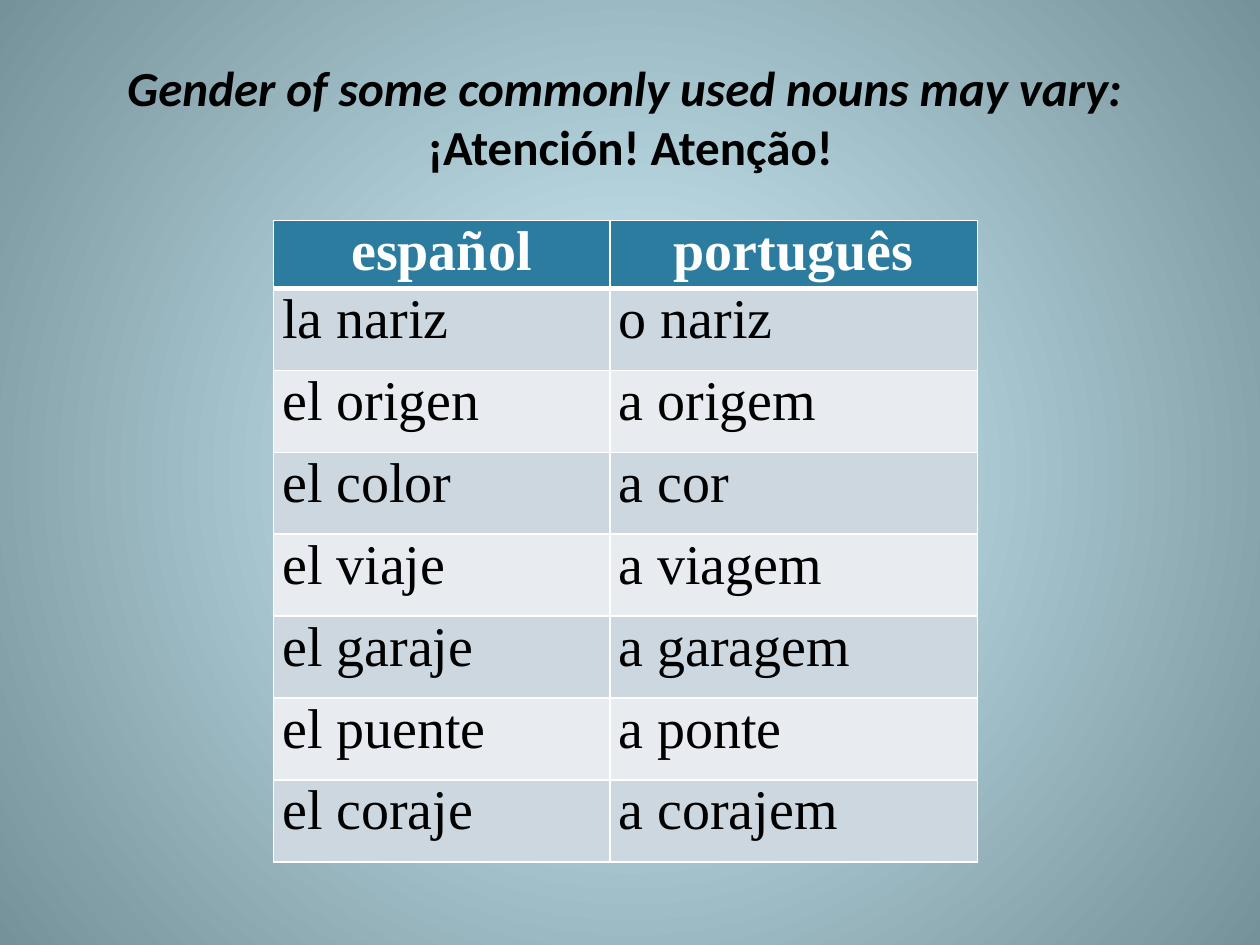
from lxml.etree import SubElement
from pptx import Presentation
from pptx.dml.color import RGBColor
from pptx.enum.text import MSO_ANCHOR as Anchor, PP_ALIGN as Align
from pptx.oxml import parse_xml
from pptx.oxml.ns import nsdecls, qn
from pptx.util import Inches, Pt

BLACK = RGBColor(0x00, 0x00, 0x00)
WHITE = RGBColor(0xFF, 0xFF, 0xFF)
HEADER_BLUE = RGBColor(0x2C, 0x7C, 0x9F)
BANDS = (RGBColor(0xCD, 0xD7, 0xDF), RGBColor(0xE8, 0xEC, 0xF0))
GLOW = RGBColor(0xD5, 0xF5, 0xFF)
EDGE = RGBColor(0x75, 0x91, 0x9A)

TITLE_FONT = {"name": "Calibri", "size": Pt(28), "bold": True}
HEADER_FONT = {"name": "Times New Roman", "size": Pt(32), "bold": True}
BODY_FONT = {**HEADER_FONT, "bold": False}
CELL_FORMAT = {
    "margin_left": Inches(0.07),
    "margin_right": Inches(0.07),
    "margin_top": 0,
    "margin_bottom": 0,
    "vertical_anchor": Anchor.TOP,
}
COLUMN_WIDTHS = (2.67, 2.92)
HEADER_HEIGHT, ROW_HEIGHT = 0.54, 0.65
NOUNS = (
    ("español", "português"),
    ("la nariz", "o nariz"),
    ("el origen", "a origem"),
    ("el color", "a cor"),
    ("el viaje", "a viagem"),
    ("el garaje", "a garagem"),
    ("el puente", "a ponte"),
    ("el coraje", "a corajem"),
)


def apply_format(target, values):
    for name, value in values.items():
        setattr(target, name, value)


def add_span(para, text, font, color):
    span = para.add_run()
    span.text = text
    apply_format(span.font, font)
    span.font.color.rgb = color


def paint_background(page):
    fill = page.background.fill
    fill.gradient()
    for stop, position, color in zip(fill.gradient_stops, (0, 1), (GLOW, EDGE)):
        stop.position = position
        stop.color.rgb = color
    gradient = page.background._cSld.find(".//" + qn("a:gradFill"))
    linear = gradient.find(qn("a:lin"))
    radial = parse_xml(
        f'<a:path {nsdecls("a")} path="circle">'
        '<a:fillToRect l="50000" t="50000" r="50000" b="50000"/></a:path>'
    )
    gradient.replace(linear, radial)


def write_title(page, width, height):
    title = page.shapes.title
    apply_format(title, {
        "left": int(width * 0.05),
        "top": int(height * 0.04),
        "width": int(width * 0.9),
        "height": int(height / 6),
    })
    frame = title.text_frame
    apply_format(frame, {"word_wrap": True, "vertical_anchor": Anchor.MIDDLE})
    para = frame.paragraphs[0]
    para.alignment = Align.CENTER
    add_span(para, "Gender of some commonly used nouns may vary: ",
             {**TITLE_FONT, "italic": True}, BLACK)
    para.add_line_break()
    add_span(para, "¡Atención! Atenção!", {**TITLE_FONT, "italic": False}, BLACK)


def draw_borders(cell, widths):
    properties = cell._tc.get_or_add_tcPr()
    for index, (side, points) in enumerate(widths.items()):
        line = SubElement(properties, qn(f"a:ln{side}"), w=str(Pt(points)))
        fill = SubElement(line, qn("a:solidFill"))
        SubElement(fill, qn("a:srgbClr"), val=str(WHITE))
        properties.insert(index, line)


def fill_cell(cell, text, row):
    header = row == 0
    apply_format(cell, CELL_FORMAT)
    cell.fill.solid()
    cell.fill.fore_color.rgb = HEADER_BLUE if header else BANDS[(row - 1) % 2]
    para = cell.text_frame.paragraphs[0]
    para.alignment = Align.CENTER if header else Align.LEFT
    add_span(para, text, HEADER_FONT if header else BODY_FONT,
             WHITE if header else BLACK)
    draw_borders(cell, {"L": 1, "R": 1, "T": 3 if row == 1 else 1,
                        "B": 3 if header else 1})


def add_noun_table(page):
    heights = [HEADER_HEIGHT] + [ROW_HEIGHT] * (len(NOUNS) - 1)
    table = page.shapes.add_table(
        len(NOUNS), len(COLUMN_WIDTHS), Inches(2.17), Inches(1.75),
        Inches(sum(COLUMN_WIDTHS)), Inches(sum(heights)),
    ).table
    for column, width in zip(table.columns, COLUMN_WIDTHS):
        column.width = Inches(width)
    for row, (pair, height) in enumerate(zip(NOUNS, heights)):
        table.rows[row].height = Inches(height)
        for column, noun in enumerate(pair):
            fill_cell(table.cell(row, column), noun, row)


def main():
    deck = Presentation()
    deck.slide_width, deck.slide_height = Inches(10), Inches(7.5)
    page = deck.slides.add_slide(deck.slide_layouts[5])
    paint_background(page)
    write_title(page, deck.slide_width, deck.slide_height)
    add_noun_table(page)
    deck.save("out.pptx")


if __name__ == "__main__":
    main()
